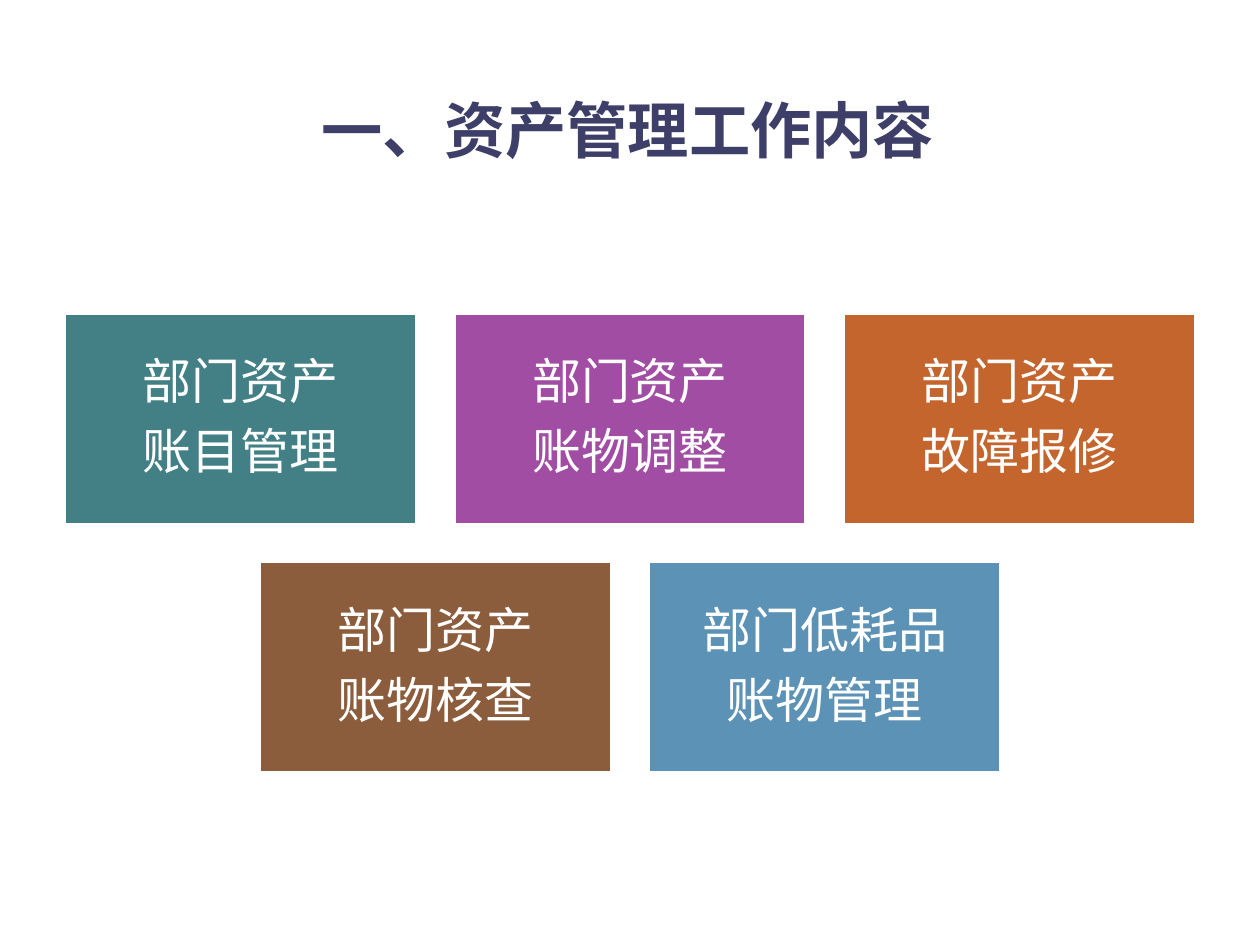
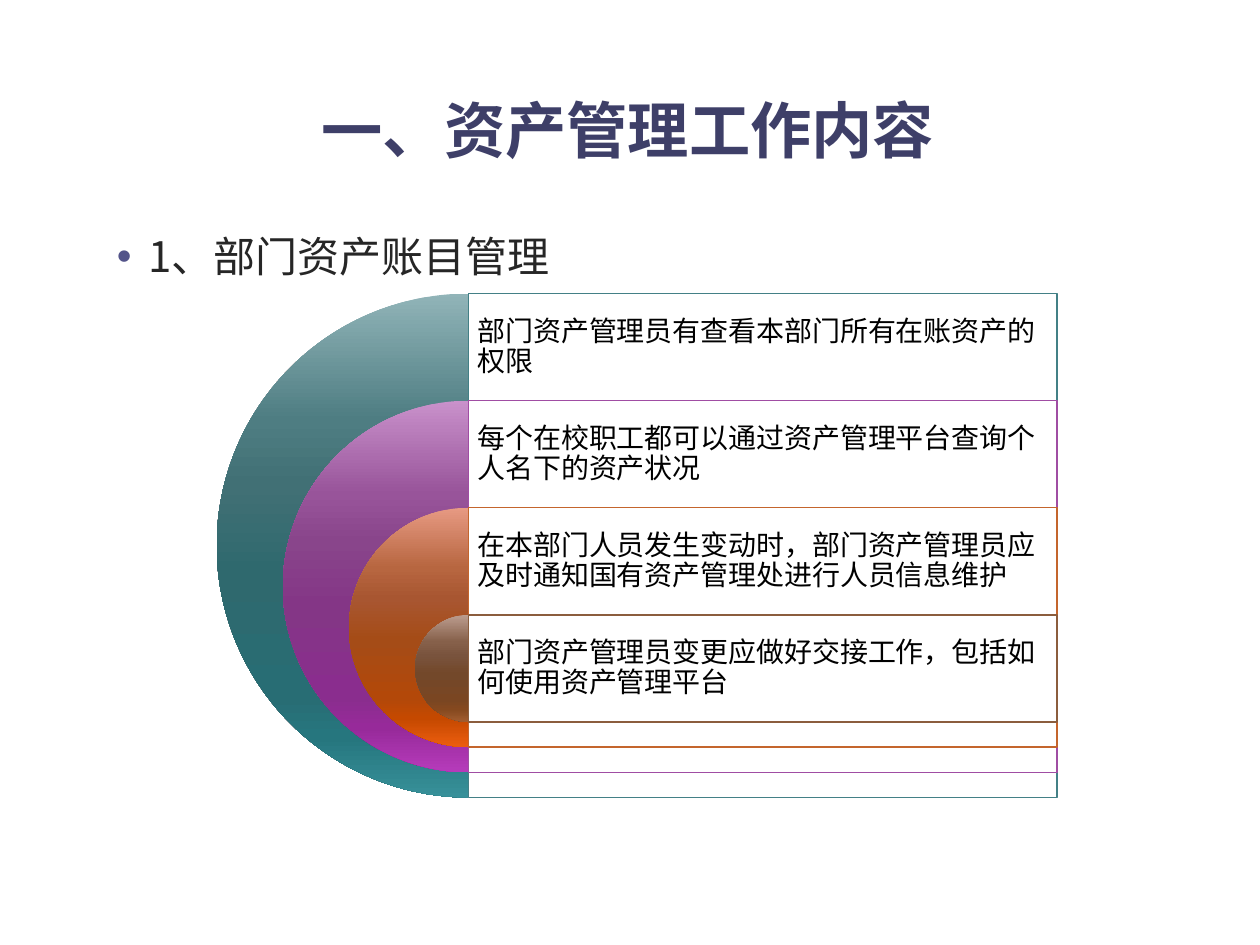
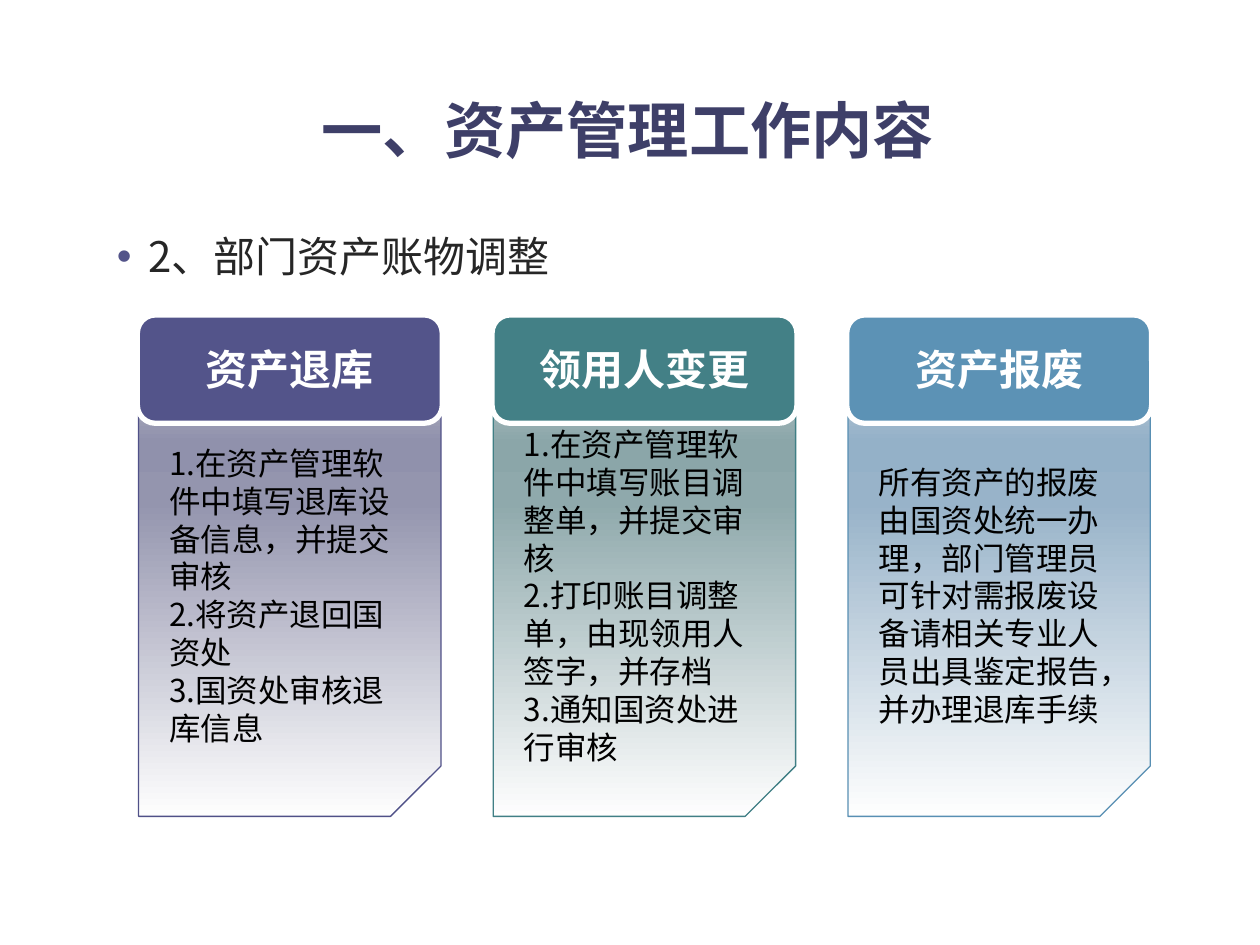
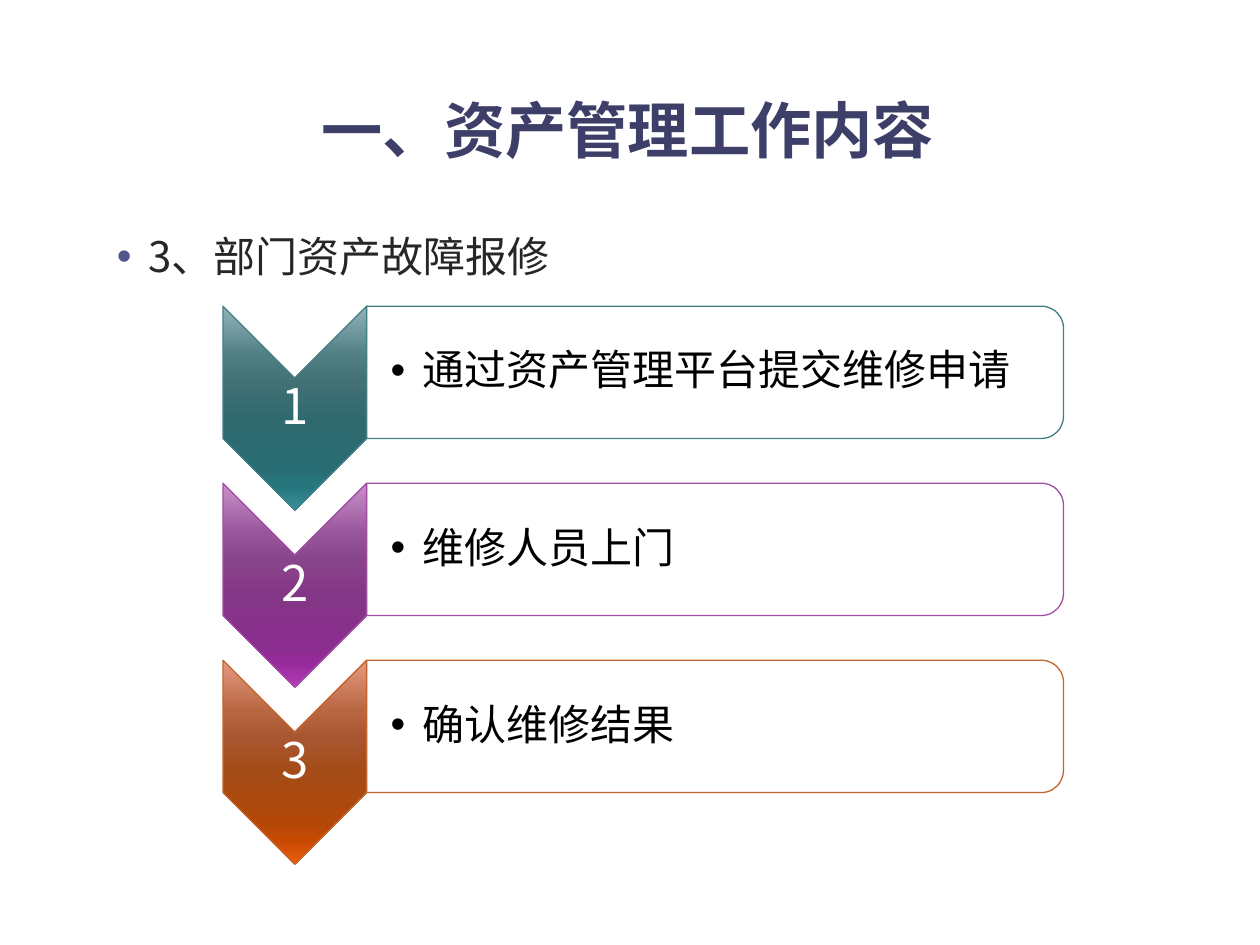
from lxml.etree import SubElement
from pptx import Presentation
from pptx.dml.color import RGBColor
from pptx.enum.shapes import MSO_SHAPE
from pptx.enum.text import MSO_ANCHOR, PP_ALIGN
from pptx.oxml import parse_xml
from pptx.oxml.ns import nsdecls, qn
from pptx.util import Inches, Pt

FONT = "Noto Sans CJK SC"
TITLE = "一、资产管理工作内容"
WIDTH, HEIGHT = 10, 7.5

COLORS = {
    "title": "3E3F68", "body": "262626", "black": "000000", "white": "FFFFFF",
    "indigo": "53548A", "teal": "438086", "purple": "A04DA3",
    "orange": "C4652D", "brown": "8B5D3D", "blue": "5C92B5",
}
GLOSS_STOPS = (0, 25, 38, 55, 80, 88, 100)
GLOSS = {
    "teal": "91B4B8 4E7D82 417075 2F696E 286D74 26767E 379099",
    "purple": "C991CB 98549A 89458B 843686 8A2D8E 972A9A B63BBB",
    "orange": "E79A83 B76640 A85631 A54C17 B34809 C54900 EC5D0F",
    "brown": "BC9D8F 86604A 79533D 73482A 7A4622 85491F A15C2F",
}
FADE_STOPS = (0, 68, 81, 86, 100)
FADE = {
    "indigo": "FEFEFE 9495AE 9091AC 9C9DB4 D7D7DF",
    "teal": "FEFEFE 8FA9AC 8BA6A9 98AFB2 D6DDDE",
    "blue": "FEFEFE 98B3C9 94B1C8 A0B8CC D8E1E9",
}
FADE_LINE = {"indigo": "505188", "teal": "407F85", "blue": "588FB3"}

TASK_ROWS = [
    [("teal", ["部门资产", "账目管理"]), ("purple", ["部门资产", "账物调整"]),
     ("orange", ["部门资产", "故障报修"])],
    [("brown", ["部门资产", "账物核查"]), ("blue", ["部门低耗品", "账物管理"])],
]
ACCOUNT_RULES = [
    ("teal", "部门资产管理员有查看本部门所有在账资产的权限"),
    ("purple", "每个在校职工都可以通过资产管理平台查询个人名下的资产状况"),
    ("orange", "在本部门人员发生变动时，部门资产管理员应及时通知国有资产管理处进行人员信息维护"),
    ("brown", "部门资产管理员变更应做好交接工作，包括如何使用资产管理平台"),
]
ADJUSTMENTS = [
    ("indigo", "资产退库", ["1.在资产管理软件中填写退库设备信息，并提交审核",
                        "2.将资产退回国资处", "3.国资处审核退库信息"]),
    ("teal", "领用人变更", ["1.在资产管理软件中填写账目调整单，并提交审核",
                       "2.打印账目调整单，由现领用人签字，并存档", "3.通知国资处进行审核"]),
    ("blue", "资产报废", ["所有资产的报废由国资处统一办理，部门管理员可针对需报废设备"
                      "请相关专业人员出具鉴定报告，并办理退库手续"]),
]
REPAIR_STEPS = [("teal", "通过资产管理平台提交维修申请"), ("purple", "维修人员上门"),
                ("orange", "确认维修结果")]


def rgb(name):
    return RGBColor.from_string(COLORS.get(name, name))


def place(sp, box):
    for key, value in zip(("left", "top", "width", "height"), box):
        setattr(sp, key, Inches(value))


def write(sp, lines, size, color, bold=False, align=PP_ALIGN.LEFT,
          anchor=MSO_ANCHOR.MIDDLE, inset=(0.1, 0.05, 0.1, 0.05), bullet=None, **spacing):
    """Fill a shape with paragraphs; bullet is (colour, left margin), spacing goes to each paragraph."""
    tf = sp.text_frame
    tf.word_wrap, tf.vertical_anchor = True, anchor
    for side, value in zip(("left", "top", "right", "bottom"), inset):
        setattr(tf, f"margin_{side}", Inches(value))
    for i, line in enumerate(lines):
        p = tf.add_paragraph() if i else tf.paragraphs[0]
        for key, value in {"alignment": align, **spacing}.items():
            setattr(p, key, value)
        r = p.add_run()
        r.text = line
        for key, value in {"name": FONT, "size": Pt(size), "bold": bold}.items():
            setattr(r.font, key, value)
        r.font.color.rgb = rgb(color)
        SubElement(r.font._element, qn("a:ea"), typeface=FONT)
        if bullet:
            bullet_color, margin = bullet
            pPr = p._p.get_or_add_pPr()
            pPr.set("marL", str(Inches(margin)))
            pPr.set("indent", str(-Inches(0.25)))
            clr = SubElement(pPr, qn("a:buClr"))
            SubElement(clr, qn("a:srgbClr"), val=COLORS[bullet_color])
            SubElement(pPr, qn("a:buFont"), typeface="Arial")
            SubElement(pPr, qn("a:buChar"), char="•")


def add_text(s, box, lines, size, color, **fmt):
    write(s.shapes.add_textbox(*map(Inches, box)), lines, size, color, **fmt)


def add_shape(s, kind, box, fill=None, line=None, weight=0.75, quarter_turn=False):
    """Draw a preset in the box it covers, also when turned by 90 degrees."""
    x, y, w, h = box
    if quarter_turn:
        box = x + (w - h) / 2, y + (h - w) / 2, h, w
    sp = s.shapes.add_shape(kind, *map(Inches, box))
    sp.shadow.inherit = False
    sp.rotation = 90 if quarter_turn else 0
    if fill:
        sp.fill.solid()
        sp.fill.fore_color.rgb = rgb(fill)
    if line:
        sp.line.color.rgb = rgb(line)
        sp.line.width = Pt(weight)
    else:
        sp.line.fill.background()
    return sp


def add_panel(s, kind, box, line, **kw):
    """Outlined panel in slightly see-through white."""
    sp = add_shape(s, kind, box, "white", line, **kw)
    clr = sp._element.spPr.find(f"{qn('a:solidFill')}/{qn('a:srgbClr')}")
    SubElement(clr, qn("a:alpha"), val="90000")
    return sp


def shade(sp, stops, colors, with_shape=0):
    """Vertical gradient over the given percentages."""
    sp.fill.background()
    grad = parse_xml(f'<a:gradFill {nsdecls("a")} rotWithShape="{with_shape}"><a:gsLst/>'
                     '<a:lin ang="5400000" scaled="0"/></a:gradFill>')
    for stop, color in zip(stops, colors.split()):
        gs = SubElement(grad[0], qn("a:gs"), pos=str(stop * 1000))
        SubElement(gs, qn("a:srgbClr"), val=color)
    spPr = sp._element.spPr
    spPr.replace(spPr.find(qn("a:noFill")), grad)


def new_slide(prs, subtitle=None):
    s = prs.slides.add_slide(prs.slide_layouts[5])
    place(s.shapes.title, (0.47, 0.45, 9.03, 1.14))
    write(s.shapes.title, [TITLE], 35, "title", bold=True, align=PP_ALIGN.CENTER)
    if subtitle:
        add_text(s, (0.7, 1.78, 9, 0.6), [subtitle], 24, "body", anchor=MSO_ANCHOR.TOP,
                 bullet=("indigo", 0.38), space_before=Pt(4.8))
    return s


def build_overview(prs):
    s = new_slide(prs)
    w, h, gap, top = 2.81, 1.69, 0.28, 2.48
    for row, tasks in enumerate(TASK_ROWS):
        left = (WIDTH - len(tasks) * (w + gap) + gap) / 2
        for col, (color, lines) in enumerate(tasks):
            box = left + col * (w + gap), top + row * (h + gap), w, h
            sp = add_shape(s, MSO_SHAPE.RECTANGLE, box, color, "white", 3)
            write(sp, lines, 28, "white", align=PP_ALIGN.CENTER, inset=(0.12,) * 4,
                  line_spacing=0.9, space_after=Pt(9.8))


def build_accounts(prs):
    s = new_slide(prs, "1、部门资产账目管理")
    center, top, size, step, shrink, panel_w = 3.72, 2.33, 4, 0.85, 1.05, 4.67
    for i, (color, rule) in enumerate(ACCOUNT_RULES):
        d, y = size - i * shrink, top + i * step
        half = add_shape(s, MSO_SHAPE.PIE, (center - d / 2, y, d, d))
        half.adjustments[0], half.adjustments[1] = 54, 162
        shade(half, GLOSS_STOPS, GLOSS[color])
        add_panel(s, MSO_SHAPE.RECTANGLE, (center, y, panel_w, d), color)
        add_text(s, (center, y, panel_w, step), [rule], 16, "black", inset=(0.07,) * 4,
                 line_spacing=0.9, space_after=Pt(5.6))


def build_adjustments(prs):
    s = new_slide(prs, "2、部门资产账物调整")
    left, pitch = 1.09, 2.815
    for i, (color, heading, lines) in enumerate(ADJUSTMENTS):
        x = left + i * pitch
        card = add_shape(s, MSO_SHAPE.SNIP_1_RECTANGLE, (x + 0.01, 2.81, 2.4, 3.67),
                         line=FADE_LINE[color])
        card._element.spPr.xfrm.set("flipV", "1")
        shade(card, FADE_STOPS, FADE[color], with_shape=1)
        head = add_shape(s, MSO_SHAPE.ROUNDED_RECTANGLE, (x, 2.5, 2.42, 0.86),
                         color, "white", 3)
        write(head, [heading], 24, "white", bold=True, align=PP_ALIGN.CENTER)
        add_text(s, (x + 0.155, 3.36, 2.11, 2.73), lines, 18, "black")


def build_repairs(prs):
    s = new_slide(prs, "3、部门资产故障报修")
    left, top, pitch, arrow_w, arrow_h = 1.77, 2.43, 1.405, 1.14, 1.62
    panel_w, panel_h, label_h = 5.53, 1.05, 0.49
    for i, (color, text) in enumerate(REPAIR_STEPS):
        y, x = top + i * pitch, left + arrow_w
        arrow = add_shape(s, MSO_SHAPE.CHEVRON, (left, y, arrow_w, arrow_h), line=color,
                          quarter_turn=True)
        shade(arrow, GLOSS_STOPS, GLOSS[color])
        add_text(s, (left, y + (arrow_h - label_h) / 2, arrow_w, label_h), [str(i + 1)],
                 28, "white", align=PP_ALIGN.CENTER, inset=(0.02,) * 4,
                 line_spacing=0.9, space_after=Pt(9.8))
        add_panel(s, MSO_SHAPE.ROUND_2_SAME_RECTANGLE, (x, y, panel_w, panel_h), color,
                  quarter_turn=True)
        add_text(s, (x, y + 0.05, panel_w - 0.05, panel_h - 0.1), [text], 24, "black",
                 inset=(0.19, 0.02, 0.02, 0.02), bullet=("black", 0.25),
                 line_spacing=0.9, space_after=Pt(3.6))


def main():
    prs = Presentation()
    prs.slide_width, prs.slide_height = Inches(WIDTH), Inches(HEIGHT)
    for build in (build_overview, build_accounts, build_adjustments, build_repairs):
        build(prs)
    prs.save("out.pptx")


if __name__ == "__main__":
    main()
